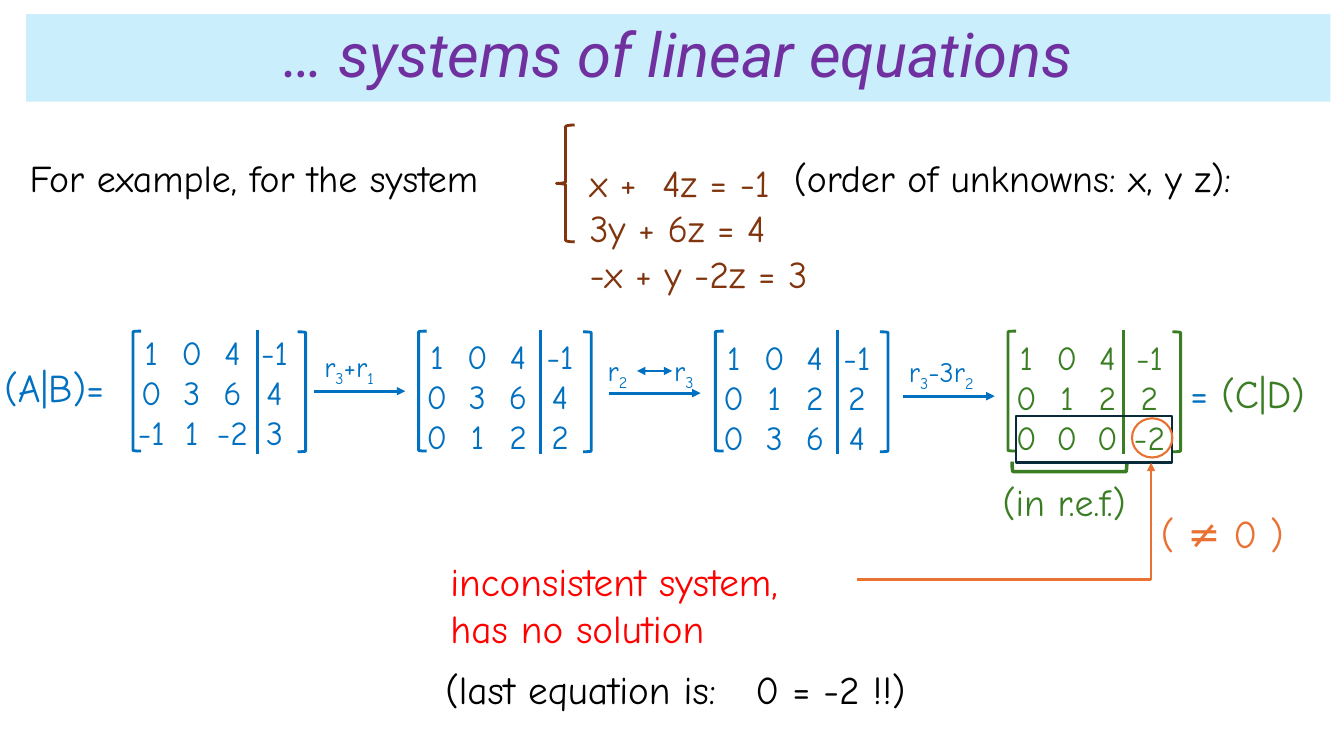
from lxml import etree
from pptx import Presentation
from pptx.dml.color import RGBColor
from pptx.enum import shapes, text
from pptx.oxml import ns
from pptx.util import Pt

BLUE, GREEN, BROWN, ORANGE = "0070C0", "3B7D23", "80350E", "E97132"
RED, BLACK, PURPLE, SKY, NAVY = "FF0000", "000000", "7030A0", "CAEEFB", "092A39"
COLUMNS = [(22, "ctr"), (51, "ctr"), (80, "ctr"), (110, "ctr")]
SHAPE = shapes.MSO_SHAPE


def rgb(value):
    """Turn a hex string into a colour."""
    return RGBColor.from_string(value)


def add_tabs(p, tabs):
    """Give a paragraph its tab stops, as pairs of position and alignment."""
    tab_list = etree.SubElement(p._p.get_or_add_pPr(), ns.qn("a:tabLst"))
    for pos, align in tabs:
        etree.SubElement(tab_list, ns.qn("a:tab"), pos=str(Pt(pos)), algn=align)


def add_text(s, lines, left, top, width, height, size, color, tabs=()):
    """Add a text box in which parts between tildes are subscripts."""
    sp = s.shapes.add_textbox(Pt(left), Pt(top), Pt(width), Pt(height))
    tf = sp.text_frame
    tf.word_wrap = True
    for n, line in enumerate(lines):
        p = tf.add_paragraph() if n else tf.paragraphs[0]
        if tabs:
            add_tabs(p, tabs)
        p.font.name, p.font.size = "Comic Neue", Pt(size)
        p.font.color.rgb = rgb(color)
        for i, part in enumerate(line.split("~")):
            if part:
                r = p.add_run()
                r.text = part
                if i % 2:
                    r._r.get_or_add_rPr().set("baseline", "-25000")
    return tf


def add_outline(s, kind, left, top, width, height, color, weight=2.0):
    """Add an unfilled shape."""
    sp = s.shapes.add_shape(kind, Pt(left), Pt(top), Pt(width), Pt(height))
    sp.shadow.inherit = False
    sp.fill.background()
    sp.line.color.rgb = rgb(color)
    sp.line.width = Pt(weight)
    return sp


def add_line(s, x1, y1, x2, y2, color, ends=()):
    """Add a straight line with arrowheads at the named ends."""
    sp = s.shapes.add_connector(
        shapes.MSO_CONNECTOR.STRAIGHT, Pt(x1), Pt(y1), Pt(x2), Pt(y2))
    sp.line.color.rgb = rgb(color)
    sp.line.width = Pt(2)
    etree.SubElement(sp._element.spPr, ns.qn("a:effectLst"))
    ln = sp.line._get_or_add_ln()
    for end in ends:
        etree.SubElement(ln, ns.qn(f"a:{end}"), type="triangle")


def add_matrix(s, rows, left, top, color, bar=87):
    """Add an augmented matrix with its brackets and dividing bar."""
    lines = ["".join("\t" + entry for entry in row.split()) for row in rows]
    add_text(s, lines, left - 16, top, 180, 95, 24, color, COLUMNS)
    add_outline(s, SHAPE.LEFT_BRACKET, left, 236.5, 5.8, 85.7, color)
    add_outline(s, SHAPE.RIGHT_BRACKET, left + 117.5, 237, 5.8, 85.7, color)
    add_line(s, left + bar, 236, left + bar, 324, color)


def add_step(s, label, left, top, arrow_left, arrow_top, tabs=()):
    """Add a row operation above its arrow."""
    add_text(s, [label], left, top, 82, 31.5, 20, BLUE, tabs)
    add_line(s, arrow_left, arrow_top, arrow_left + 65.5, arrow_top, BLUE, ["tailEnd"])


def add_title(s, title):
    """Add the title band."""
    sp = add_outline(s, SHAPE.RECTANGLE, 18.7, 10.1, 931.7, 62.6, SKY)
    sp.fill.solid()
    sp.fill.fore_color.rgb = rgb(SKY)
    sp.line.fill.background()
    tf = sp.text_frame
    tf.vertical_anchor = text.MSO_ANCHOR.MIDDLE
    p = tf.paragraphs[0]
    p.text = title
    p.alignment = text.PP_ALIGN.CENTER
    p.line_spacing = 0.9
    p.font.name, p.font.size, p.font.italic = "Roboto", Pt(44), True
    p.font.color.rgb = rgb(PURPLE)


def add_system(s):
    """Add the system of equations and its introduction."""
    add_text(s, ["For example, for the system\t(order of unknowns: x, y z):"],
             14, 107.3, 940, 40, 27, BLACK, [(546, "l")])
    add_text(s, ["x +\t4z = -1", "3y + 6z = 4", "-x + y -2z = 3"],
             414, 110.5, 215, 106, 27, BROWN, [(52, "l")])
    add_outline(s, SHAPE.LEFT_BRACE, 397.5, 89.3, 13, 83.5, BROWN)


def add_reduction(s):
    """Add the matrices and the row operations between them."""
    add_text(s, ["(A|B)="], -4, 256.3, 100, 41, 28, BLUE)
    add_matrix(s, ["1 0 4 -1", "0 3 6 4", "-1 1 -2 3"], 95, 233.3, BLUE, 89)
    add_step(s, "r~3~+r~1~", 224.6, 246.2, 224, 279.4)
    add_matrix(s, ["1 0 4 -1", "0 3 6 4", "0 1 2 2"], 299, 236.2, BLUE)
    add_step(s, "r~2~\tr~3~", 427, 249.1, 435, 280.8, [(47.5, "l")])
    add_line(s, 455, 265, 480.2, 265, BLUE, ["headEnd", "tailEnd"])
    add_matrix(s, ["1 0 4 -1", "0 1 2 2", "0 3 6 4"], 511, 236.9, BLUE)
    add_step(s, "r~3~-3r~2~", 642.2, 249.8, 645, 283)
    add_matrix(s, ["1 0 4 -1", "0 1 2 2", "0 0 0 -2"], 720, 236.9, GREEN, 82.5)
    tf = add_text(s, ["="], 843, 260, 112, 41, 28, BLUE)
    r = tf.paragraphs[0].add_run()
    r.text = " (C|D)"
    r.font.color.rgb = rgb(GREEN)


def add_conclusion(s):
    """Mark the last row and state what follows from it."""
    add_outline(s, SHAPE.RIGHT_BRACKET, 760.3, 292.3, 7.2, 82, GREEN, 2.5).rotation = 90
    add_text(s, ["(in r.e.f.)"], 709, 338.4, 120, 40, 27, GREEN)
    add_outline(s, SHAPE.RECTANGLE, 725.8, 297.4, 111.6, 33, NAVY, 1.5)
    add_outline(s, SHAPE.OVAL, 808.6, 298.8, 28.8, 28, ORANGE, 1.5)
    add_line(s, 822.2, 414, 822.2, 330.5, ORANGE, ["tailEnd"])
    add_line(s, 822.2, 414, 612, 414, ORANGE)
    add_text(s, ["( ≠ 0 )"], 822.2, 360, 105, 41, 28, ORANGE)
    add_text(s, ["inconsistent system,", "has no solution"],
             314.6, 394.6, 358, 75, 28, RED)
    add_text(s, ["(last equation is:\t0 = -2 !!)"],
             311, 471.6, 414, 41, 28, BLACK, [(221.5, "l")])


def main():
    """Build and save the slide."""
    prs = Presentation()
    prs.slide_width, prs.slide_height = Pt(960), Pt(540)
    s = prs.slides.add_slide(prs.slide_layouts[6])
    add_title(s, "… systems of linear equations")
    add_system(s)
    add_reduction(s)
    add_conclusion(s)
    prs.save("out.pptx")


if __name__ == "__main__":
    main()
